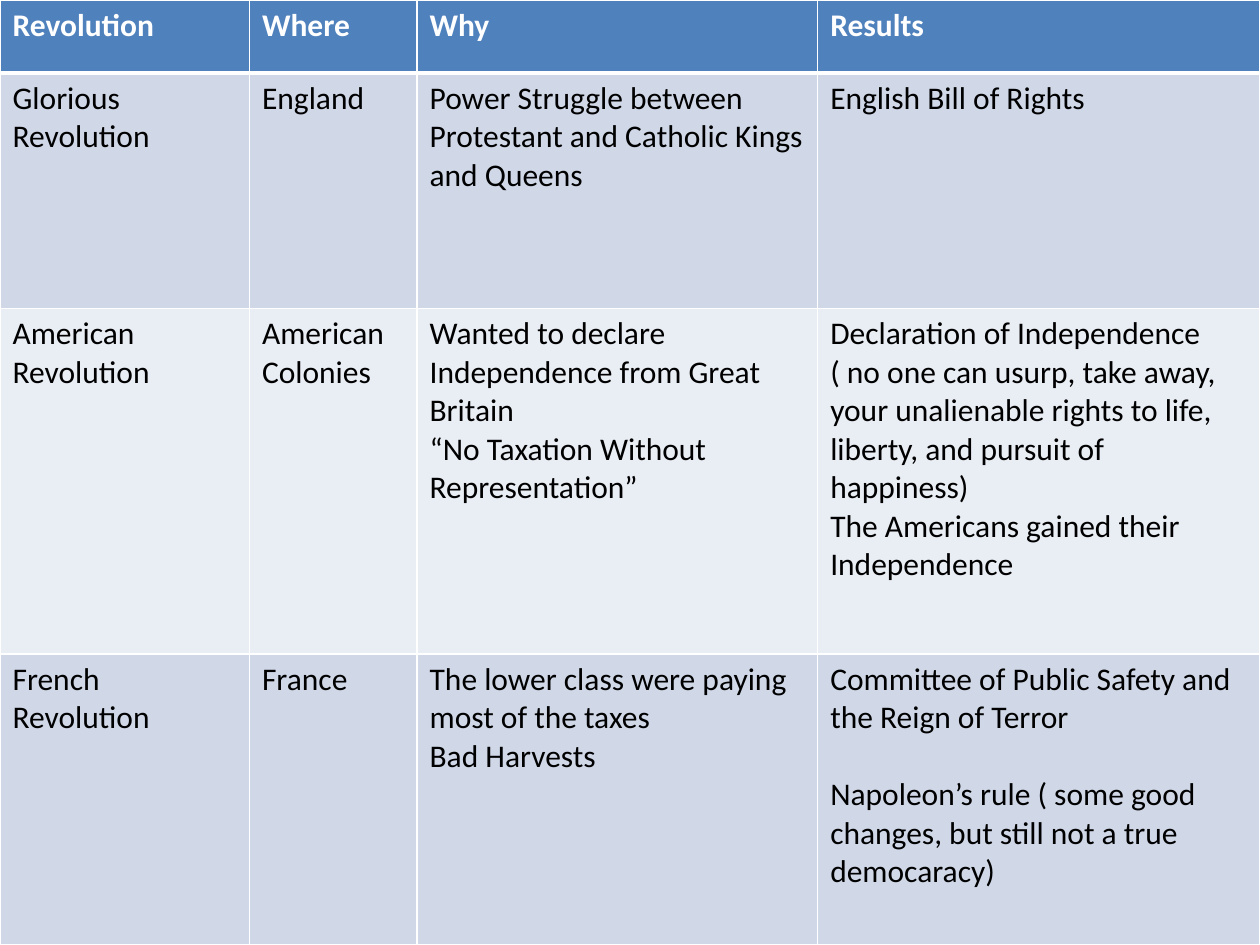
from lxml.etree import SubElement
from pptx import Presentation
from pptx.dml.color import RGBColor
from pptx.oxml.ns import qn
from pptx.util import Inches, Pt

WHITE = RGBColor(0xFF, 0xFF, 0xFF)
BLACK = RGBColor(0x00, 0x00, 0x00)
HEADER_BLUE = RGBColor(0x4F, 0x81, 0xBD)
BAND_DARK = RGBColor(0xD0, 0xD8, 0xE8)
BAND_LIGHT = RGBColor(0xE9, 0xED, 0xF4)

COLUMN_WIDTHS = [1.98, 1.33, 3.18, 3.51]
ROW_HEIGHTS = [0.58, 1.87, 2.74, 2.31]
LINE_HEIGHT = 22

# Each cell is a list of paragraphs.
REVOLUTIONS = [
    [["Revolution"], ["Where"], ["Why"], ["Results"]],
    [
        ["Glorious Revolution"],
        ["England"],
        ["Power Struggle between Protestant and Catholic Kings and Queens"],
        ["English Bill of Rights"],
    ],
    [
        ["American Revolution"],
        ["American Colonies"],
        ["Wanted to declare Independence from Great Britain",
         "“No Taxation Without Representation”"],
        ["Declaration of Independence ( no one can usurp, take away, your "
         "unalienable rights to life, liberty, and pursuit of happiness)",
         "The Americans gained their Independence"],
    ],
    [
        ["French Revolution"],
        ["France"],
        ["The lower class were paying most of the taxes", "Bad Harvests"],
        ["Committee of Public Safety and the Reign of Terror",
         "Napoleon’s rule ( some good changes, but still not a true democaracy)"],
    ],
]
SPACED_CELL = (3, 3)


def write_text(text_frame, paragraphs, *, color, bold=False, size=18,
               font="Calibri", gap=0):
    """Write the paragraphs, with gap points between one and the next."""
    for index, text in enumerate(paragraphs):
        paragraph = text_frame.paragraphs[0] if index == 0 else text_frame.add_paragraph()
        paragraph.space_before = Pt(gap if index else 0)
        run = paragraph.add_run()
        run.text = text
        run.font.name = font
        run.font.size = Pt(size)
        run.font.bold = bold
        run.font.color.rgb = color


def set_borders(cell, *, color, left=1, right=1, top=1, bottom=1):
    properties = cell._tc.get_or_add_tcPr()
    for side, width in zip("LRTB", (left, right, top, bottom)):
        line = SubElement(properties, qn(f"a:ln{side}"), w=str(Pt(width)))
        fill = SubElement(line, qn("a:solidFill"))
        SubElement(fill, qn("a:srgbClr"), val=str(color))


def format_cell(cell, row, column):
    is_header = row == 0
    set_borders(cell, color=WHITE, top=3 if row == 1 else 1,
                bottom=3 if is_header else 1)
    cell.fill.solid()
    band = BAND_DARK if row % 2 else BAND_LIGHT
    cell.fill.fore_color.rgb = HEADER_BLUE if is_header else band
    write_text(cell.text_frame, REVOLUTIONS[row][column],
               color=WHITE if is_header else BLACK, bold=is_header,
               gap=LINE_HEIGHT if (row, column) == SPACED_CELL else 0)


def add_revolutions_table(slide, width, height):
    table = slide.shapes.add_table(
        len(ROW_HEIGHTS), len(COLUMN_WIDTHS), 0, 0, width, height).table
    for column, column_width in zip(table.columns, COLUMN_WIDTHS):
        column.width = Inches(column_width)
    for row, row_height in zip(table.rows, ROW_HEIGHTS):
        row.height = Inches(row_height)
    for row in range(len(ROW_HEIGHTS)):
        for column in range(len(COLUMN_WIDTHS)):
            format_cell(table.cell(row, column), row, column)


def main():
    presentation = Presentation()
    presentation.slide_width = Inches(10)
    presentation.slide_height = Inches(7.5)
    blank_layout = presentation.slide_layouts[6]
    slide = presentation.slides.add_slide(blank_layout)
    add_revolutions_table(slide, presentation.slide_width, presentation.slide_height)
    presentation.save("out.pptx")


if __name__ == "__main__":
    main()
